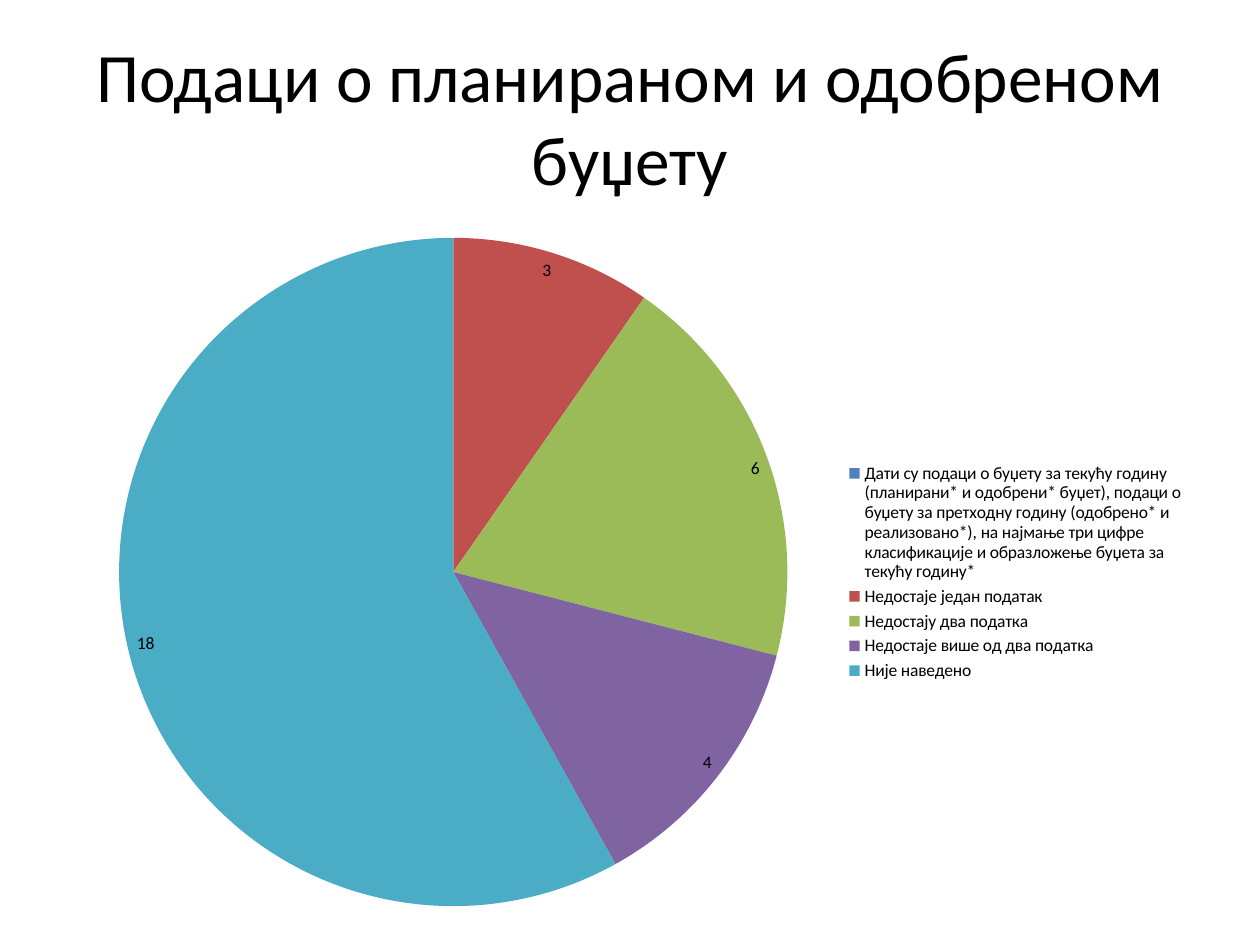
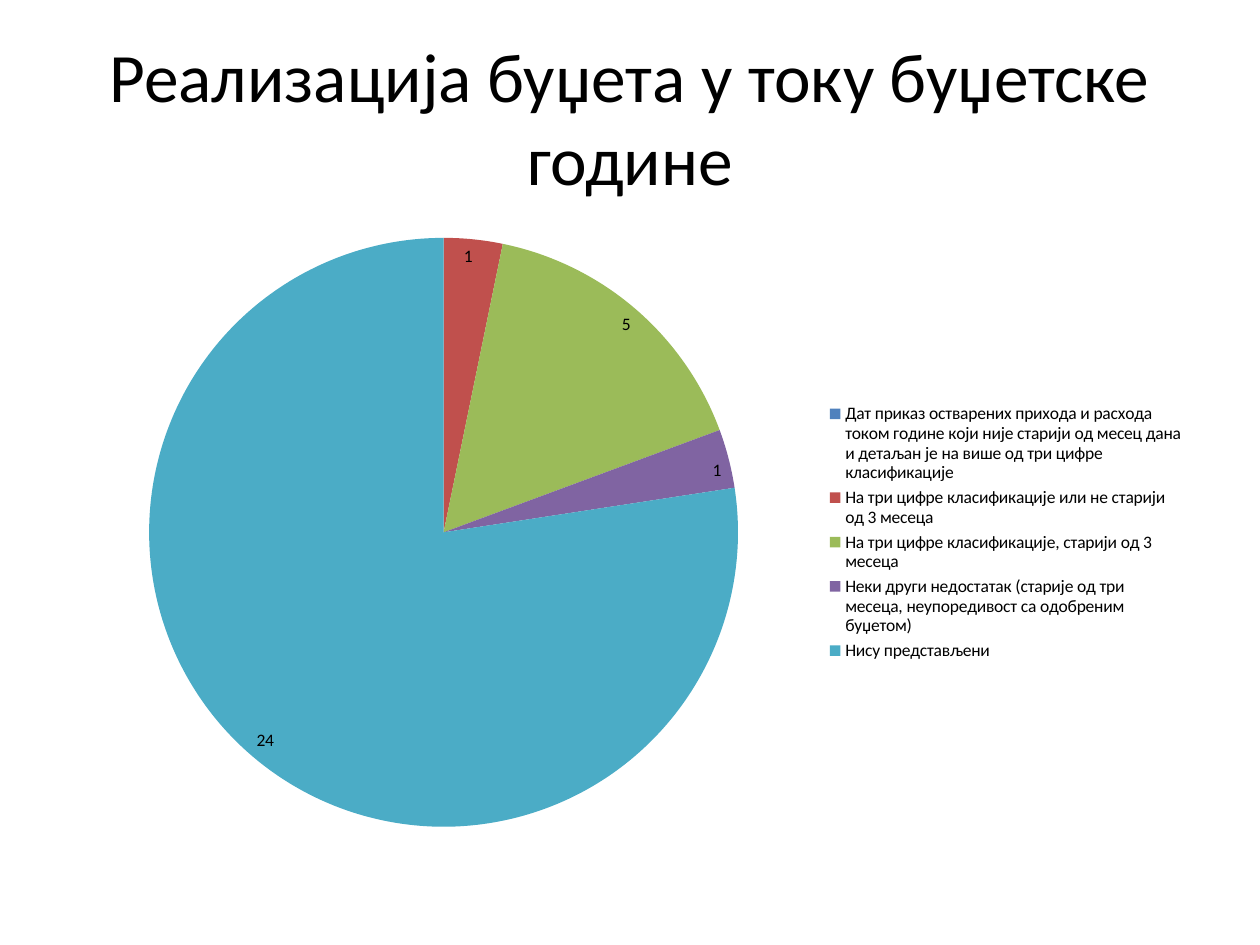
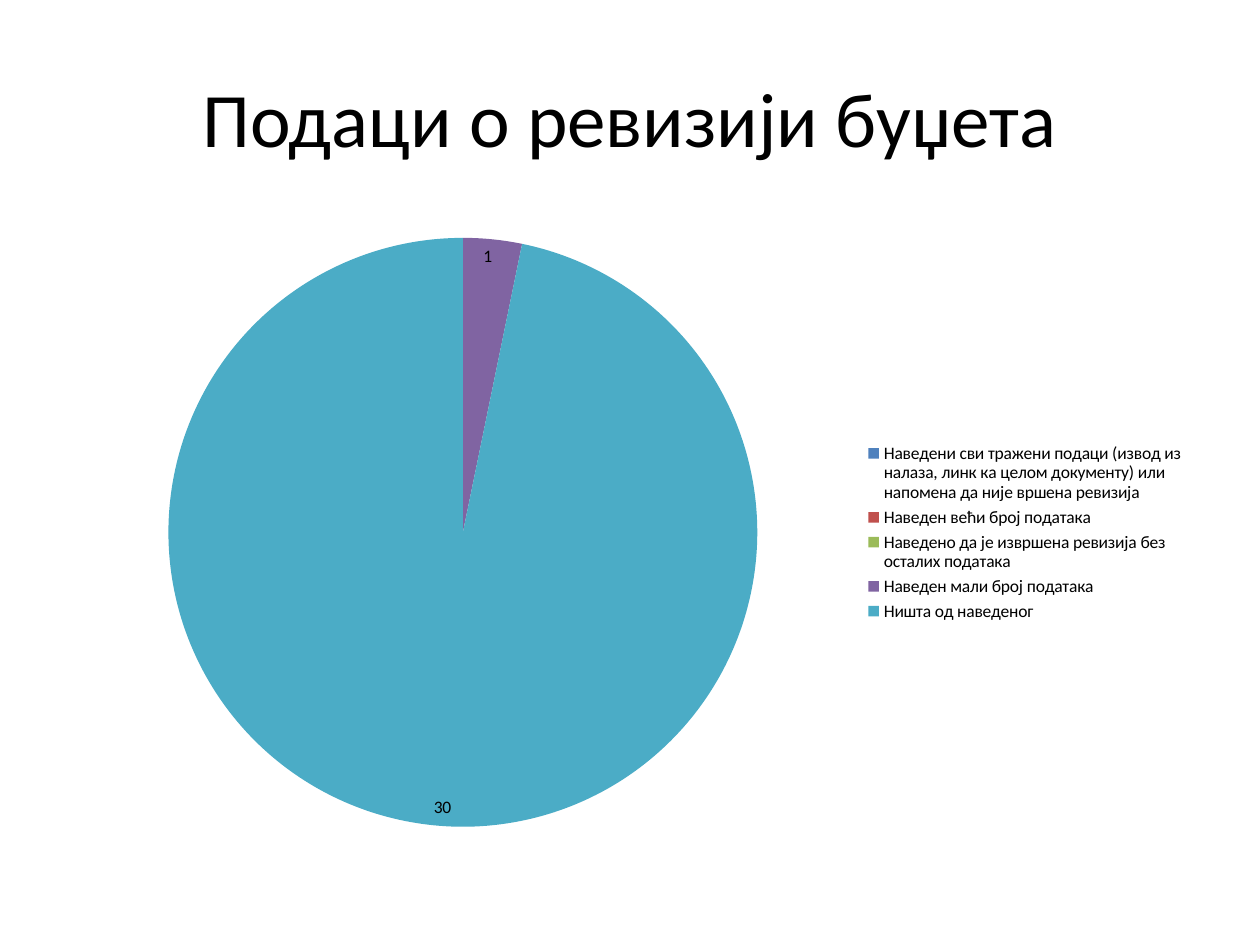
from pptx import Presentation
from pptx import util as u
from pptx.chart.data import CategoryChartData
from pptx.dml.color import RGBColor
from pptx.enum import chart as ch
from pptx.enum import text as t

FONT = "Calibri"
BLACK = RGBColor(0x00, 0x00, 0x00)
ANSWER_COLOURS = [
    RGBColor(0x4F, 0x81, 0xBD),
    RGBColor(0xC0, 0x50, 0x4D),
    RGBColor(0x9B, 0xBB, 0x59),
    RGBColor(0x80, 0x64, 0xA2),
    RGBColor(0x4B, 0xAC, 0xC6),
]
LEFT, WIDTH = u.Inches(0.5), u.Inches(9)
TITLE_TOP, TITLE_HEIGHT = u.Inches(0.3), u.Inches(1.25)
PIE_TOP = u.Inches(1.75)

BUDGET_PAGES = [
    {
        "title": "Подаци о планираном и одобреном буџету",
        "title_size": 39.6,
        "pie_height": 5.58,
        "answers": {
            "Дати су подаци о буџету за текућу годину (планирани* и одобрени* буџет), "
            "подаци о буџету за претходну годину (одобрено* и реализовано*), на најмање "
            "три цифре класификације и образложење буџета за текућу годину*": 0,
            "Недостаје један податак": 3,
            "Недостају два податка": 6,
            "Недостаје више од два податка": 4,
            "Није наведено": 18,
        },
    },
    {
        "title": "Реализација буџета у току буџетске године",
        "title_size": 39.6,
        "pie_height": 4.95,
        "answers": {
            "Дат приказ остварених прихода и расхода током године који није старији "
            "од месец дана и детаљан је на више од три цифре класификације": 0,
            "На три цифре класификације или не старији од 3 месеца": 1,
            "На три цифре класификације, старији од 3 месеца": 5,
            "Неки други недостатак (старије од три месеца, неупоредивост са "
            "одобреним буџетом)": 1,
            "Нису представљени": 24,
        },
    },
    {
        "title": "Подаци о ревизији буџета",
        "title_size": 44,
        "pie_height": 4.95,
        "answers": {
            "Наведени сви тражени подаци (извод из налаза, линк ка целом документу) "
            "или напомена да није вршена ревизија": 0,
            "Наведен већи број података": 0,
            "Наведено да је извршена ревизија без осталих података": 0,
            "Наведен мали број података": 1,
            "Ништа од наведеног": 30,
        },
    },
]


def style_font(font, size):
    """Apply the shared typeface and colour at the given point size."""
    font.name = FONT
    font.size = u.Pt(size)
    font.color.rgb = BLACK


def add_text(slide, words, *, left, top, width, height, size,
             align=t.PP_ALIGN.CENTER, anchor=t.MSO_ANCHOR.MIDDLE):
    """Add one wrapped paragraph of text in a box."""
    frame = slide.shapes.add_textbox(left, top, width, height).text_frame
    frame.word_wrap = True
    frame.vertical_anchor = anchor
    paragraph = frame.paragraphs[0]
    paragraph.alignment = align
    run = paragraph.add_run()
    run.text = words
    style_font(run.font, size)


def add_answer_pie(slide, answers, height):
    """Add a pie of answer counts with a legend on the right."""
    counts = CategoryChartData(number_format="0")
    counts.categories = list(answers)
    counts.add_series("Series 1", list(answers.values()))
    pie = slide.shapes.add_chart(
        ch.XL_CHART_TYPE.PIE, LEFT, PIE_TOP, WIDTH, u.Inches(height), counts
    ).chart
    style_font(pie.font, 10)
    pie.has_title = False
    pie.has_legend = True
    pie.legend.position = ch.XL_LEGEND_POSITION.RIGHT
    pie.legend.include_in_layout = False

    plot = pie.plots[0]
    plot.vary_by_categories = True
    plot.has_data_labels = True
    labels = plot.data_labels
    labels.show_value = True
    labels.show_percentage = False
    labels.number_format = "#"
    labels.number_format_is_linked = False
    labels.position = ch.XL_LABEL_POSITION.INSIDE_END
    style_font(labels.font, 10)

    for index, colour in enumerate(ANSWER_COLOURS):
        fill = plot.series[0].points[index].format.fill
        fill.solid()
        fill.fore_color.rgb = colour


def main():
    """Build the budget transparency slides and save them."""
    deck = Presentation()
    deck.slide_width, deck.slide_height = u.Inches(10), u.Inches(7.5)
    for page in BUDGET_PAGES:
        slide = deck.slides.add_slide(deck.slide_layouts[6])
        add_text(slide, page["title"], left=LEFT, top=TITLE_TOP, width=WIDTH,
                 height=TITLE_HEIGHT, size=page["title_size"])
        add_answer_pie(slide, page["answers"], page["pie_height"])
    deck.save("out.pptx")


if __name__ == "__main__":
    main()
